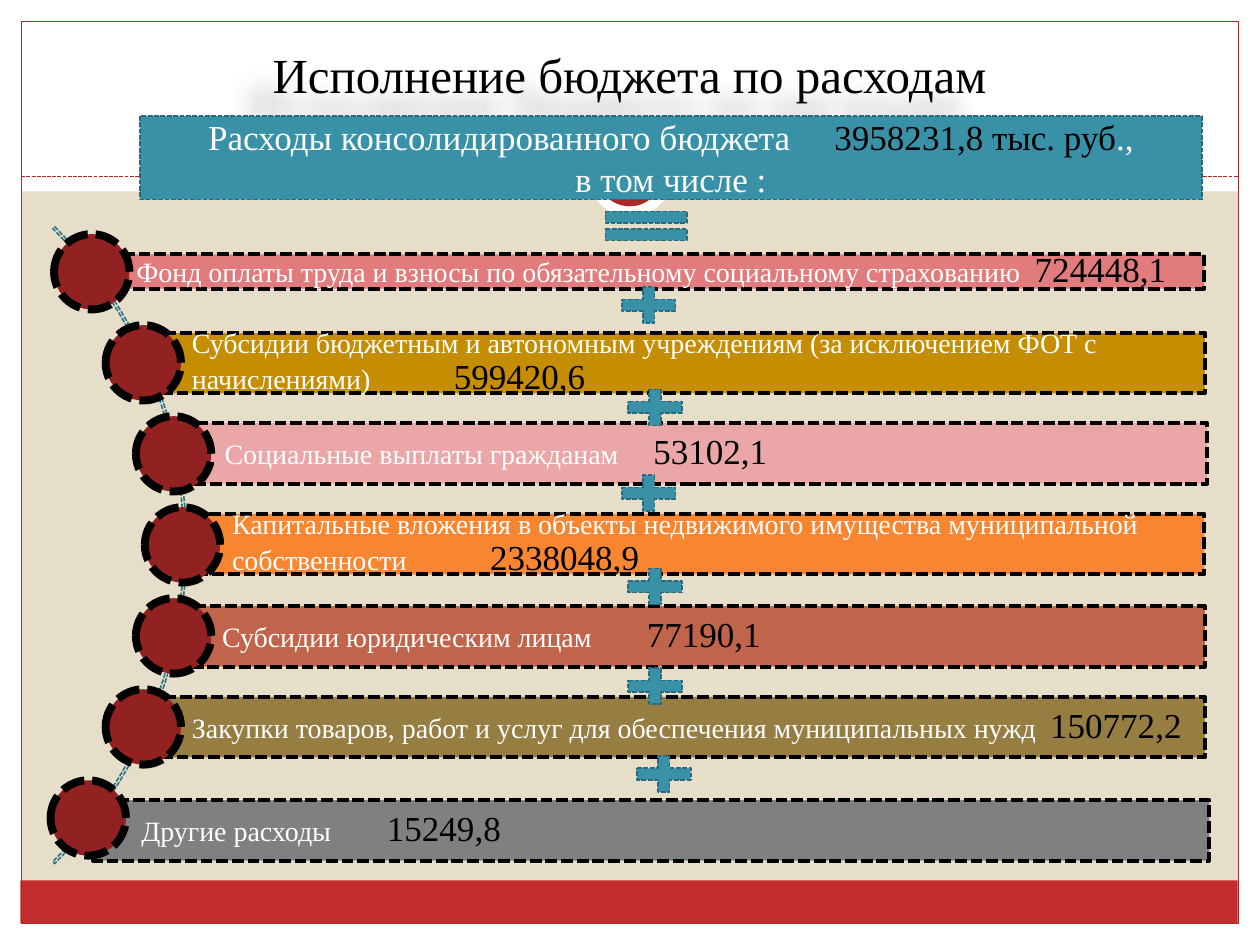
from typing import NamedTuple, Optional

from lxml import etree
from pptx import Presentation
from pptx import util as u
from pptx.dml.color import RGBColor
from pptx.enum import dml, shapes, text
from pptx.oxml import ns

FONT = "Times New Roman"
BLACK = RGBColor(0x00, 0x00, 0x00)
WHITE = RGBColor(0xFF, 0xFF, 0xFF)
SAND = RGBColor(0xE7, 0xDE, 0xC9)
RED = RGBColor(0xC3, 0x2D, 0x2E)
FRAME_RED = RGBColor(0xAC, 0x28, 0x29)
DARK_RED = RGBColor(0x92, 0x22, 0x22)
TEAL = RGBColor(0x38, 0x91, 0xA7)
TEAL_EDGE = RGBColor(0x29, 0x6B, 0x7C)
ARC_EDGE = RGBColor(0x2D, 0x74, 0x86)
ROSE = RGBColor(0xE1, 0x7B, 0x7C)
GOLD = RGBColor(0xC5, 0x8D, 0x01)
PINK = RGBColor(0xEB, 0xA7, 0xA8)
ORANGE = RGBColor(0xF8, 0x86, 0x31)
BRICK = RGBColor(0xC0, 0x65, 0x4C)
OLIVE = RGBColor(0x96, 0x7D, 0x42)
GREY = RGBColor(0x80, 0x80, 0x80)

KIND = shapes.MSO_SHAPE
DASH = dml.MSO_LINE.SQUARE_DOT
CIRCLE_TOP, CIRCLE_STEP, CIRCLE_SIZE = 4.72, 1.835, 1.52


class Area(NamedTuple):
    left: float
    top: float
    width: float
    height: float


class Edge(NamedTuple):
    color: RGBColor
    points: float
    dash: Optional[dml.MSO_LINE] = DASH


class Expense(NamedTuple):
    label: str
    value: str
    area: Area
    fill: RGBColor
    circle_left: float
    value_tab: float


TEAL_LINE = Edge(TEAL_EDGE, 0.9)
BAR_LINE = Edge(BLACK, 2.25)
CIRCLE_LINE = Edge(BLACK, 4.5)

MARGINS = [
    Area(0, 18.62, 25.4, 0.43),
    Area(0, 0, 25.4, 3.86),
    Area(0, 0, 0.43, 19.05),
    Area(24.97, 0, 0.43, 19.05),
]

EXPENSES = [
    Expense("Фонд оплаты труда и взносы по обязательному социальному страхованию",
            "724448,1", Area(1.78, 5.13, 22.5, 0.69), ROSE, 1.09, 18.11),
    Expense("Субсидии бюджетным и автономным учреждениям (за исключением ФОТ с начислениями)",
            "599420,6", Area(2.9, 6.71, 21.39, 1.22), GOLD, 2.13, 5.28),
    Expense("Социальные выплаты гражданам",
            "53102,1", Area(3.56, 8.53, 20.78, 1.22), PINK, 2.74, 8.64),
    Expense("Капитальные вложения в объекты недвижимого имущества муниципальной собственности",
            "2338048,9", Area(3.71, 10.36, 20.57, 1.22), ORANGE, 2.92, 5.2),
    Expense("Субсидии юридическим лицам",
            "77190,1", Area(3.51, 12.22, 20.78, 1.22), BRICK, 2.74, 8.56),
    Expense("Закупки товаров, работ и услуг для обеспечения муниципальных нужд",
            "150772,2", Area(2.9, 14.05, 21.39, 1.22), OLIVE, 2.13, 17.3),
    Expense("Другие расходы",
            "15249,8", Area(1.88, 16.13, 22.5, 1.22), GREY, 1.02, 4.95),
]

PLUS_CORNERS = [(12.34, 5.66), (12.47, 7.72), (12.34, 9.45),
                (12.47, 11.33), (12.47, 13.34), (12.65, 15.11)]


def add_box(page, kind: shapes.MSO_SHAPE, area: Area,
            fill: Optional[RGBColor] = None, edge: Optional[Edge] = None):
    """Add a preset shape without a shadow."""
    box = page.shapes.add_shape(kind, *map(u.Cm, area))
    box.shadow.inherit = False
    if fill is None:
        box.fill.background()
    else:
        box.fill.solid()
        box.fill.fore_color.rgb = fill
    if edge is None:
        box.line.fill.background()
    else:
        box.line.color.rgb = edge.color
        box.line.width = u.Pt(edge.points)
        if edge.dash is not None:
            box.line.dash_style = edge.dash
    box.text_frame.word_wrap = True
    box.text_frame.vertical_anchor = text.MSO_ANCHOR.MIDDLE
    return box


def add_span(para, words: str, color: RGBColor, size: Optional[float] = None):
    """Add a coloured run to a paragraph."""
    span = para.add_run()
    span.text = words
    span.font.color.rgb = color
    if size is not None:
        span.font.size = u.Pt(size)
    return span


def add_frame(page) -> None:
    """Draw the margins, the border and the ring behind the content."""
    for margin in MARGINS:
        add_box(page, KIND.RECTANGLE, margin, WHITE)
    add_box(page, KIND.RECTANGLE, Area(0.41, 17.75, 24.54, 0.86), RED)
    add_box(page, KIND.RECTANGLE, Area(0.43, 0.43, 24.54, 18.19),
            edge=Edge(FRAME_RED, 0.75, None))
    rule = page.shapes.add_connector(shapes.MSO_CONNECTOR.STRAIGHT,
                                     u.Cm(0.43), u.Cm(3.56), u.Cm(24.97), u.Cm(3.56))
    rule.line.color.rgb = FRAME_RED
    rule.line.width = u.Pt(0.75)
    rule.line.dash_style = DASH
    etree.SubElement(rule._element.spPr, ns.qn("a:effectLst"))
    add_box(page, KIND.OVAL, Area(11.86, 2.67, 1.7, 1.7), WHITE)
    add_box(page, KIND.OVAL, Area(12.11, 2.92, 1.17, 1.17), WHITE, Edge(FRAME_RED, 4, None))


def add_title(page) -> None:
    """Write the heading with its soft shadow."""
    box = add_box(page, KIND.ROUNDED_RECTANGLE, Area(0.84, 0.64, 23.7, 1.7))
    effects = box._element.spPr.find(ns.qn("a:effectLst"))
    shadow = etree.SubElement(effects, ns.qn("a:outerShdw"), blurRad="152400",
                              dist="270000", dir="8100000", rotWithShape="0")
    tint = etree.SubElement(shadow, ns.qn("a:srgbClr"), val="000000")
    etree.SubElement(tint, ns.qn("a:alpha"), val="30000")
    para = box.text_frame.paragraphs[0]
    para.alignment = text.PP_ALIGN.CENTER
    para.font.name = FONT
    para.font.size = u.Pt(28)
    add_span(para, "Исполнение бюджета по расходам", BLACK)


def add_total(page) -> None:
    """Draw the total spending box."""
    box = add_box(page, KIND.RECTANGLE, Area(2.82, 2.34, 21.41, 1.68), TEAL, TEAL_LINE)
    first, second = box.text_frame.paragraphs[0], box.text_frame.add_paragraph()
    for para in (first, second):
        para.alignment = text.PP_ALIGN.CENTER
        para.font.name = FONT
        para.font.size = u.Pt(20)
    add_span(first, "Расходы консолидированного бюджета", WHITE)
    gap = add_span(first, " ", WHITE)
    gap._r.get_or_add_rPr().set("spc", "2000")
    add_span(first, "3958231,8 тыс. руб", BLACK)
    add_span(first, ".,", WHITE)
    add_span(second, "в том числе :", WHITE)


def add_expense(page, index: int, expense: Expense) -> None:
    """Draw one spending bar with its circle."""
    bar = add_box(page, KIND.RECTANGLE, expense.area, expense.fill, BAR_LINE)
    frame = bar.text_frame
    frame.margin_left = u.Cm(0.97)
    frame.margin_top = frame.margin_right = frame.margin_bottom = u.Cm(0.1)
    para = frame.paragraphs[0]
    para.alignment = text.PP_ALIGN.LEFT
    para.line_spacing = 0.9
    tabs = etree.SubElement(para._p.get_or_add_pPr(), ns.qn("a:tabLst"))
    etree.SubElement(tabs, ns.qn("a:tab"), pos=str(u.Cm(expense.value_tab)), algn="l")
    para.font.name = FONT
    add_span(para, expense.label + "\t", WHITE, 16)
    add_span(para, expense.value, BLACK, 20)
    add_box(page, KIND.OVAL,
            Area(expense.circle_left, CIRCLE_TOP + index * CIRCLE_STEP, CIRCLE_SIZE, CIRCLE_SIZE),
            DARK_RED, CIRCLE_LINE)


def main() -> None:
    """Build the budget spending slide."""
    deck = Presentation()
    deck.slide_width, deck.slide_height = u.Cm(25.4), u.Cm(19.05)
    page = deck.slides.add_slide(deck.slide_layouts[6])
    page.background.fill.solid()
    page.background.fill.fore_color.rgb = SAND
    add_frame(page)
    add_title(page)
    arc = add_box(page, KIND.BLOCK_ARC, Area(-14.4, 1.91, 18.16, 18.16), edge=Edge(ARC_EDGE, 0.9))
    for index, amount in enumerate((189, 27, 0.003)):
        arc.adjustments[index] = amount
    for index, expense in enumerate(EXPENSES):
        add_expense(page, index, expense)
    add_total(page)
    add_box(page, KIND.MATH_EQUAL, Area(11.91, 4.06, 2.24, 0.99), TEAL, TEAL_LINE)
    for left, top in PLUS_CORNERS:
        add_box(page, KIND.MATH_PLUS, Area(left, top, 1.47, 0.99), TEAL, TEAL_LINE)
    deck.save("out.pptx")


if __name__ == "__main__":
    main()
